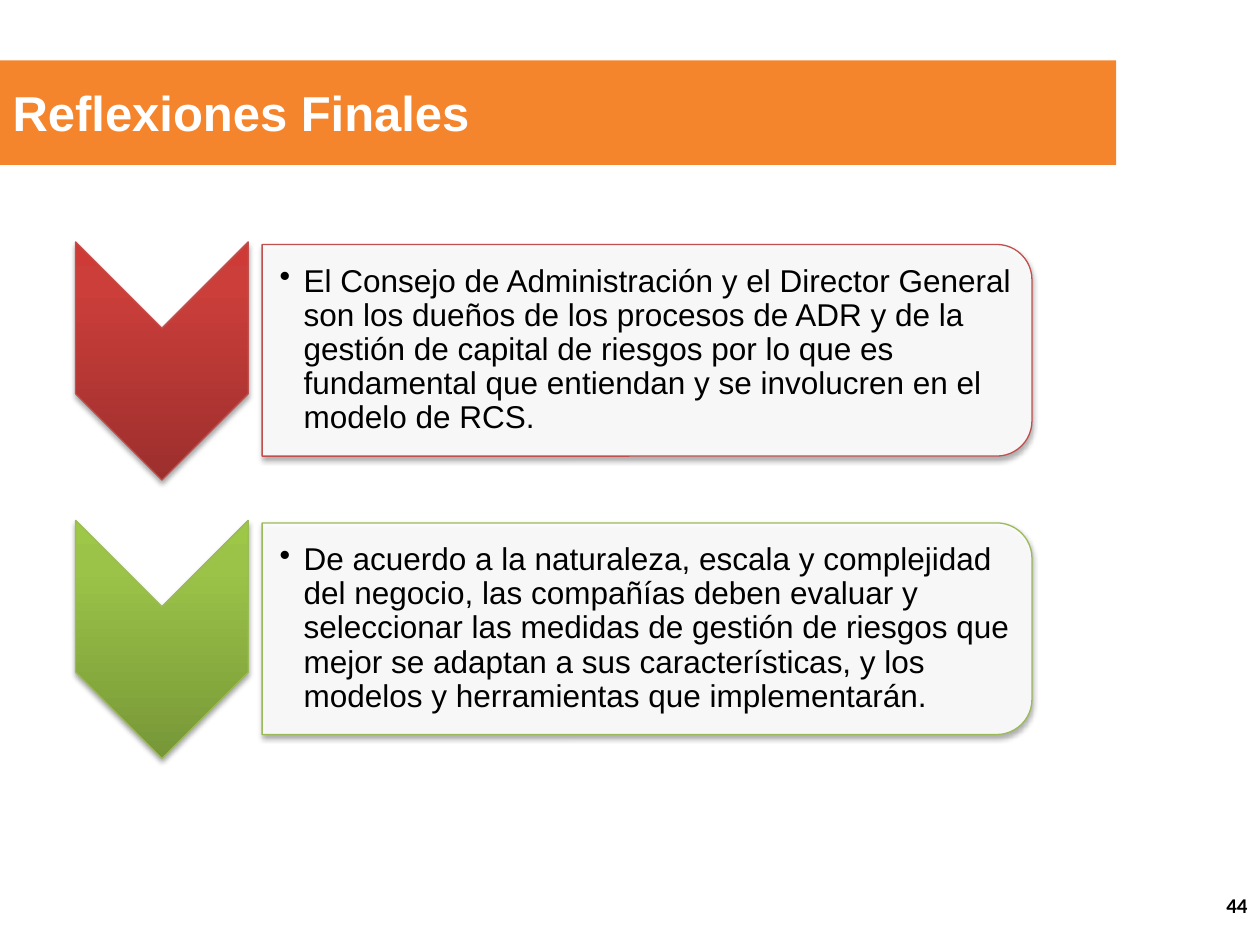
import lxml.etree
import pptx
import pptx.dml.color
import pptx.enum.shapes
import pptx.enum.text
import pptx.oxml
import pptx.oxml.ns
import pptx.util

Inches = pptx.util.Inches
Pt = pptx.util.Pt
SHAPES = pptx.enum.shapes.MSO_SHAPE
ALIGN = pptx.enum.text.PP_ALIGN
MIDDLE = pptx.enum.text.MSO_ANCHOR.MIDDLE
NAMESPACE = pptx.oxml.ns.nsdecls("a")

REFLECTIONS = [
    ("El Consejo de Administración y el Director General son los dueños de los procesos "
     "de ADR y de la gestión de capital de riesgos por lo que es fundamental que entiendan "
     "y se involucren en el modelo de RCS.",
     "C0504D", [(0, "9C2F2D"), (80, "CB3E3A"), (100, "CE3B37")]),
    ("De acuerdo a la naturaleza, escala y complejidad del negocio, las compañías deben "
     "evaluar y seleccionar las medidas de gestión de riesgos que mejor se adaptan a sus "
     "características, y los modelos y herramientas que implementarán.",
     "9BBB59", [(0, "779737"), (80, "9BC348"), (100, "9DC746")]),
]


def color(value):
    """Turn a hex string into a colour."""
    return pptx.dml.color.RGBColor.from_string(value)


def write(box, text, size, hue, font="Arial", bold=False, align=ALIGN.LEFT):
    """Put one formatted, vertically centred paragraph into a box."""
    frame = box.text_frame
    frame.word_wrap = True
    frame.vertical_anchor = MIDDLE
    frame.text = text
    para = frame.paragraphs[0]
    para.alignment = align
    for span in para.runs:
        span.font.size = Pt(size)
        span.font.name = font
        span.font.bold = bold
        span.font.color.rgb = color(hue)
    return para


def add_upright(page, kind, left, top, width, height, turn, outline):
    """Add a quarter-turned shape that covers the given upright box."""
    shape = page.shapes.add_shape(
        kind, Inches(left + (width - height) / 2), Inches(top + (height - width) / 2),
        Inches(height), Inches(width))
    shape.rotation = turn
    shape.line.color.rgb = color(outline)
    shape.line.width = Pt(0.75)
    return shape


def add_shadow(shape):
    """Give a shape a soft shadow that falls downwards."""
    shape._element.spPr.append(pptx.oxml.parse_xml(
        f'<a:effectLst {NAMESPACE}><a:outerShdw blurRad="{Pt(3.1)}" dist="{Pt(1.8)}" '
        'dir="5400000" rotWithShape="0"><a:srgbClr val="000000"><a:alpha val="35000"/>'
        '</a:srgbClr></a:outerShdw></a:effectLst>'))


def fill_gradient(shape, stops):
    """Fill a shape with a gradient that runs from bottom to top."""
    marks = "".join(f'<a:gs pos="{place * 1000}"><a:srgbClr val="{hue}"/></a:gs>'
                    for place, hue in stops)
    shape._element.spPr.find(pptx.oxml.ns.qn("a:prstGeom")).addnext(pptx.oxml.parse_xml(
        f'<a:gradFill {NAMESPACE} rotWithShape="0"><a:gsLst>{marks}</a:gsLst>'
        '<a:lin ang="16200000" scaled="0"/></a:gradFill>'))


def fill_panel(shape):
    """Fill a shape with slightly transparent white."""
    shape.fill.solid()
    shape.fill.fore_color.rgb = color("FFFFFF")
    tint = shape._element.spPr.find(".//" + pptx.oxml.ns.qn("a:srgbClr"))
    lxml.etree.SubElement(tint, pptx.oxml.ns.qn("a:alpha"), val="90000")


def add_bullet(para):
    """Give a paragraph a hanging bullet."""
    properties = para._p.get_or_add_pPr()
    properties.set("marL", str(Inches(0.19)))
    properties.set("indent", str(Inches(-0.19)))
    lxml.etree.SubElement(properties, pptx.oxml.ns.qn("a:buChar"), char="•")
    para.line_spacing = 0.9


def add_heading(page, left, top, width, height, text):
    """Place the title on its orange band."""
    band = page.shapes.add_shape(SHAPES.RECTANGLE, Inches(left), Inches(top),
                                 Inches(width), Inches(height))
    band.shadow.inherit = False
    band.fill.solid()
    band.fill.fore_color.rgb = color("F5852C")
    band.line.fill.background()
    title = page.shapes.title
    title._element.addprevious(band._element)
    title.left, title.top = Inches(left), Inches(top + 0.1)
    title.width, title.height = Inches(width - 0.58), Inches(0.61)
    write(title, text, 28, "FFFFFF", bold=True)


def add_reflection(page, left, top, width, height, text, outline, stops):
    """Place a downward chevron with its text panel to the right."""
    arrow_width = 1.37
    arrow = add_upright(page, SHAPES.CHEVRON, left, top, arrow_width, height, 90, outline)
    fill_gradient(arrow, stops)
    add_shadow(arrow)

    panel_left, panel_top, panel_height = left + arrow_width + 0.11, top + 0.02, 1.68
    panel_width = left + width - panel_left
    panel = add_upright(page, SHAPES.ROUND_2_SAME_RECTANGLE, panel_left, panel_top,
                        panel_width, panel_height, 90, outline)
    fill_panel(panel)
    add_shadow(panel)

    inset = 0.08
    box = page.shapes.add_textbox(
        Inches(panel_left), Inches(panel_top + inset),
        Inches(panel_width - inset), Inches(panel_height - 2 * inset))
    frame = box.text_frame
    frame.margin_left = Inches(0.14)
    frame.margin_top = frame.margin_right = frame.margin_bottom = Inches(0.01)
    add_bullet(write(box, text, 18, "000000"))


def add_page_number(page, left, top, width, height, number):
    """Place the page number in its corner."""
    box = page.shapes.add_textbox(Inches(left), Inches(top), Inches(width), Inches(height))
    write(box, number, 12, "000000", "Calibri", True, ALIGN.RIGHT)


def main():
    """Build the slide and save it."""
    deck = pptx.Presentation()
    deck.slide_width, deck.slide_height = Inches(10), Inches(7.5)
    page = deck.slides.add_slide(deck.slide_layouts[5])
    add_heading(page, 0, 0.48, 8.86, 0.83, "Reflexiones Finales")
    for row, (text, outline, stops) in enumerate(REFLECTIONS):
        add_reflection(page, 0.6, 1.92 + row * 2.21, 7.59, 1.89, text, outline, stops)
    add_page_number(page, 7.67, 6.98, 2.33, 0.4, "44")
    deck.save("out.pptx")


if __name__ == "__main__":
    main()
